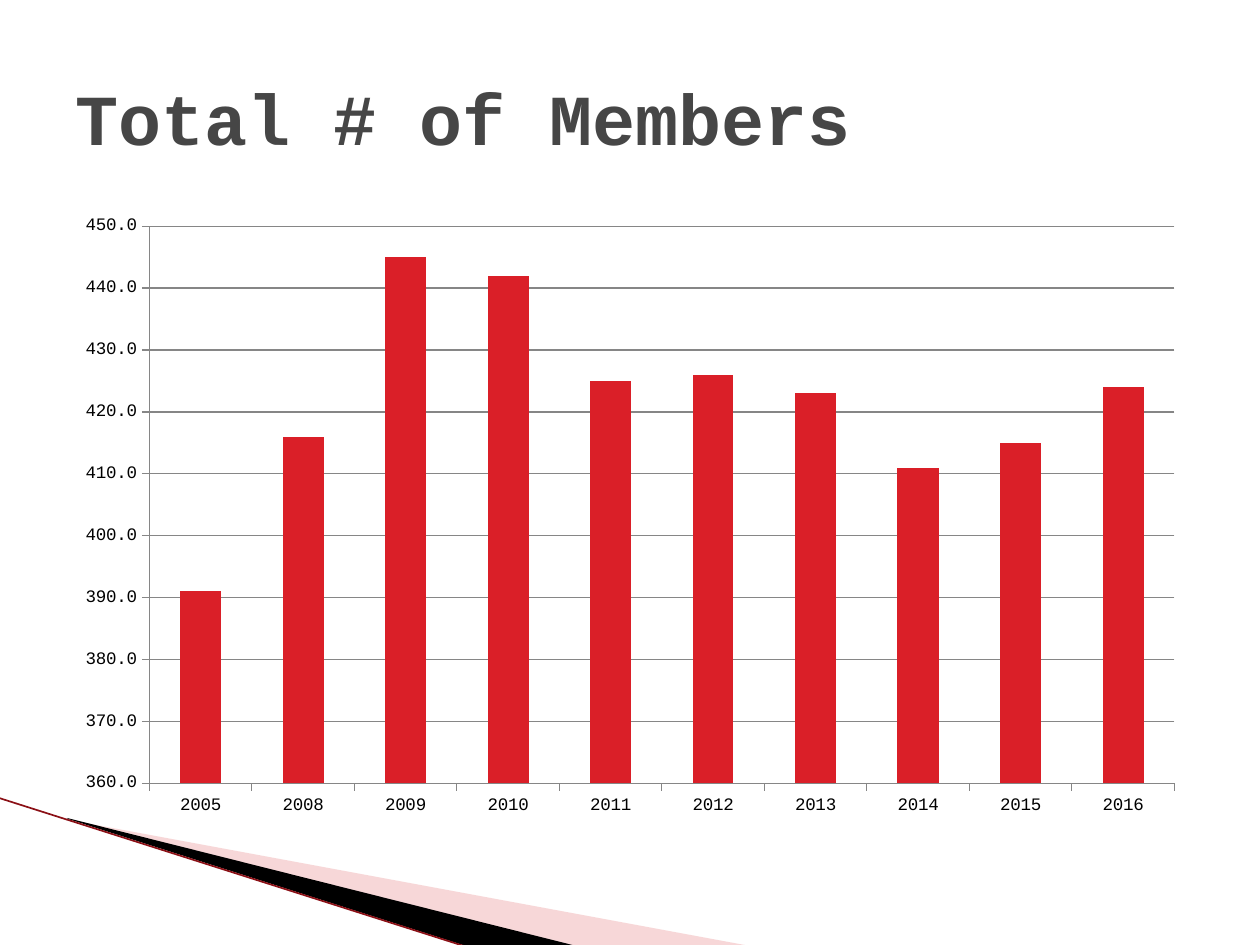
from lxml import etree
from pptx import Presentation
from pptx.chart.data import CategoryChartData
from pptx.dml.color import RGBColor
from pptx.enum.chart import XL_CHART_TYPE, XL_TICK_MARK
from pptx.enum.shapes import MSO_CONNECTOR
from pptx.enum.text import MSO_ANCHOR, PP_ALIGN
from pptx.oxml.ns import qn
from pptx.util import Pt

PX = 914400 / 126
FONT = "Courier New"
COLUMNS = XL_CHART_TYPE.COLUMN_CLUSTERED
OUTSIDE = XL_TICK_MARK.OUTSIDE
STRAIGHT = MSO_CONNECTOR.STRAIGHT

RED = RGBColor(0xDA, 0x1F, 0x28)
PINK = RGBColor(0xED, 0x9D, 0x9E)
DARK_RED = RGBColor(0x8B, 0x10, 0x16)
BLACK = RGBColor(0, 0, 0)
TITLE_GRAY = RGBColor(0x46, 0x46, 0x46)
GRID_GRAY = RGBColor(0x86, 0x86, 0x86)

MEMBERS = {
    "2005": 391, "2008": 416, "2009": 445, "2010": 442, "2011": 425,
    "2012": 426, "2013": 423, "2014": 411, "2015": 415, "2016": 424,
}


def px(*lengths):
    """Turn pixel lengths into whole EMU."""
    return [round(length * PX) for length in lengths]


prs = Presentation()
prs.slide_width, prs.slide_height = px(1260, 945)
slide = prs.slides.add_slide(prs.slide_layouts[5])

# Corner wedges
WEDGES = [
    (PINK, 40, [(69, 820), (750, 946), (575, 946), (69, 819)]),
    (BLACK, 100, [(67, 818), (576, 946), (469, 947), (68, 819)]),
]
for color, opacity, points in WEDGES:
    outline = slide.shapes.build_freeform(*points[0], scale=PX)
    outline.add_line_segments(points[1:], close=True)
    wedge = outline.convert_to_shape()
    wedge.shadow.inherit = False
    wedge.fill.solid()
    wedge.fill.fore_color.rgb = color
    wedge.line.fill.background()
    if opacity < 100:
        rgb = wedge.fill._xPr.find(".//" + qn("a:srgbClr"))
        etree.SubElement(rgb, qn("a:alpha"), val=str(opacity * 1000))

edge = slide.shapes.add_connector(STRAIGHT, *px(-1, 798, 467, 947))
edge.line.color.rgb = DARK_RED
edge.line.width = Pt(0.95)
etree.SubElement(edge._element.spPr, qn("a:effectLst"))

# Title
title = slide.shapes.title
title.left, title.top, title.width, title.height = px(63, 38, 1134, 157)
title.text_frame.text = "Total # of Members"
title.text_frame.vertical_anchor = MSO_ANCHOR.MIDDLE
heading = title.text_frame.paragraphs[0]
heading.alignment = PP_ALIGN.LEFT
heading_font = heading.runs[0].font
heading_font.name = FONT
heading_font.size = Pt(41)
heading_font.bold = True
heading_font.color.rgb = TITLE_GRAY

# Member counts by year
data = CategoryChartData(number_format="0.0")
data.categories = list(MEMBERS)
data.add_series("Series 1", list(MEMBERS.values()))
chart = slide.shapes.add_chart(COLUMNS, *px(63, 204, 1134, 624), data).chart
chart.has_legend = False
chart.has_title = False
chart.font.name = FONT
chart.font.size = Pt(10)
chart.font.color.rgb = BLACK

plot = chart.plots[0]
plot.gap_width = 150
plot.vary_by_categories = False
bars = plot.series[0]
bars.format.fill.solid()
bars.format.fill.fore_color.rgb = RED

years, counts = chart.category_axis, chart.value_axis
for axis in (years, counts):
    axis.major_tick_mark = OUTSIDE
    axis.format.line.color.rgb = GRID_GRAY
    axis.format.line.width = Pt(0.75)
counts.minimum_scale = 360
counts.maximum_scale = 450
counts.major_unit = 10
counts.has_major_gridlines = True
counts.major_gridlines.format.line.color.rgb = GRID_GRAY
counts.major_gridlines.format.line.width = Pt(0.75)
counts.tick_labels.number_format = "0.0"
counts.tick_labels.number_format_is_linked = False

prs.save("out.pptx")
